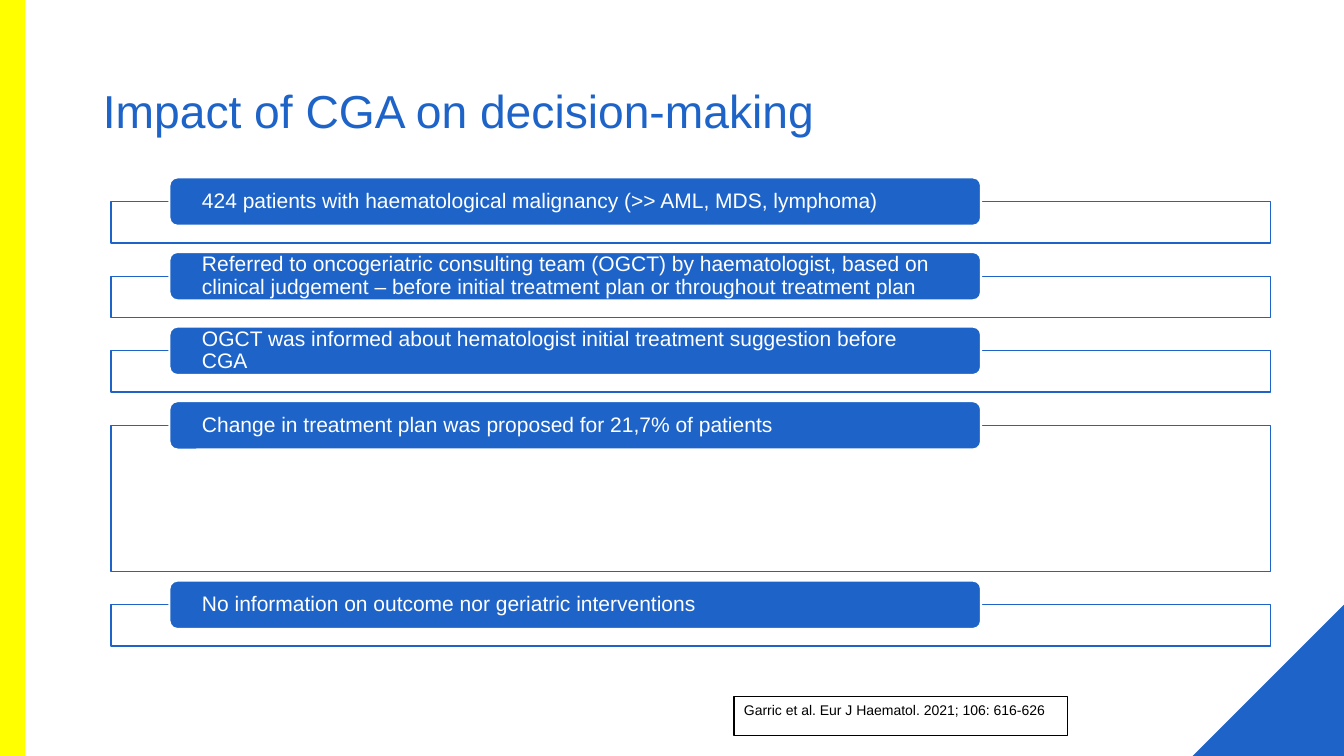
from lxml import etree
from pptx import Presentation
from pptx.dml.color import RGBColor
from pptx.enum.shapes import MSO_SHAPE
from pptx.enum.text import MSO_ANCHOR, PP_ALIGN
from pptx.oxml.ns import qn
from pptx.util import Inches, Pt

RECT, PILL, TRIANGLE = MSO_SHAPE.RECTANGLE, MSO_SHAPE.ROUNDED_RECTANGLE, MSO_SHAPE.RIGHT_TRIANGLE
MIDDLE, TOP, LEFT = MSO_ANCHOR.MIDDLE, MSO_ANCHOR.TOP, PP_ALIGN.LEFT
TITLE_ONLY = 5
COLUMNS, ROWS = 13.33, 7.5  # grid of one-inch cells
COLORS = {"blue": "1E64C8", "yellow": "FFFF00", "white": "FFFFFF", "black": "000000"}

FINDINGS = [  # heading, frame height in rows
    ("424 patients with haematological malignancy (>> AML, MDS, lymphoma)", 0.41),
    ("Referred to oncogeriatric consulting team (OGCT) by haematologist, based on "
     "clinical judgement – before initial treatment plan or throughout treatment plan", 0.41),
    ("OGCT was informed about hematologist initial treatment suggestion before CGA", 0.41),
    ("Change in treatment plan was proposed for 21,7% of patients", 1.45),
    ("No information on outcome nor geriatric interventions", 0.41),
]


def color(name):
    return RGBColor.from_string(COLORS[name])


def apply(target, values):
    for attribute, value in values.items():
        setattr(target, attribute, value)


class SlideBuilder:
    font = "Arial"

    def __init__(self, deck):
        apply(deck, {"slide_width": Inches(COLUMNS), "slide_height": Inches(ROWS)})
        self.column = deck.slide_width / COLUMNS
        self.row = deck.slide_height / ROWS
        self.slide = deck.slides.add_slide(deck.slide_layouts[TITLE_ONLY])

    def place(self, left, top, width, height):
        return [round(cells * unit) for cells, unit in
                zip((left, top, width, height), (self.column, self.row) * 2)]

    def label(self, shape, text, size, ink, anchor=MIDDLE, margins=(0.1, 0.05), **spacing):
        frame = shape.text_frame
        side, end = margins
        apply(frame, {"text": text, "word_wrap": True, "vertical_anchor": anchor,
                      "margin_left": Inches(side), "margin_right": Inches(side),
                      "margin_top": Inches(end), "margin_bottom": Inches(end)})
        paragraph = frame.paragraphs[0]
        apply(paragraph, {"alignment": LEFT, **spacing})
        font = paragraph.runs[0].font
        apply(font, {"name": self.font, "size": Pt(size), "bold": False})
        font.color.rgb = color(ink)

    def title(self, text, *cells):
        heading = self.slide.shapes.title
        apply(heading, dict(zip(("left", "top", "width", "height"), self.place(*cells))))
        self.label(heading, text, 33, "blue", line_spacing=0.9)

    def shape(self, kind, *cells, fill=None, line=None, weight=1, opacity=None):
        shape = self.slide.shapes.add_shape(kind, *self.place(*cells))
        shape.shadow.inherit = False
        if fill:
            shape.fill.solid()
            shape.fill.fore_color.rgb = color(fill)
        else:
            shape.fill.background()
        if opacity:
            tint = shape._element.spPr.find(qn("a:solidFill"))[0]
            etree.SubElement(tint, qn("a:alpha"), val=str(opacity * 1000))
        if line:
            shape.line.color.rgb = color(line)
            shape.line.width = Pt(weight)
        else:
            shape.line.fill.background()
        return shape

    def corner(self, size):
        triangle = self.shape(TRIANGLE, COLUMNS - size, ROWS - size, size, size, fill="blue")
        triangle._element.spPr.find(qn("a:xfrm")).set("flipH", "1")

    def finding(self, text, top, height):
        self.shape(RECT, 1.1, top, 11.5, height, fill="white", line="blue", opacity=90)
        pill = self.shape(PILL, 1.68, top - 0.24, 8.05, 0.48,
                          fill="blue", line="white", weight=1.5)
        self.label(pill, text, 15, "white", margins=(0.3, 0), line_spacing=0.9)

    def citation(self, text, *cells):
        box = self.shape(RECT, *cells, line="black", weight=0.75)
        self.label(box, text, 10, "black", anchor=TOP, space_before=Pt(7.5))


def main():
    deck = Presentation()
    page = SlideBuilder(deck)

    # Corner, title and source
    page.corner(1.5)
    page.title("Impact of CGA on decision-making", 0.92, 0.4, 11.5, 1.45)
    page.citation("Garric et al. Eur J Haematol. 2021; 106: 616-626", 7.28, 6.91, 3.31, 0.39)

    # Findings stacked with an equal gap
    top, gap = 2, 0.33
    for text, height in FINDINGS:
        page.finding(text, top, height)
        top += height + gap

    # Side band
    page.shape(RECT, 0, 0, 0.25, ROWS, fill="yellow")

    deck.save("out.pptx")


if __name__ == "__main__":
    main()
